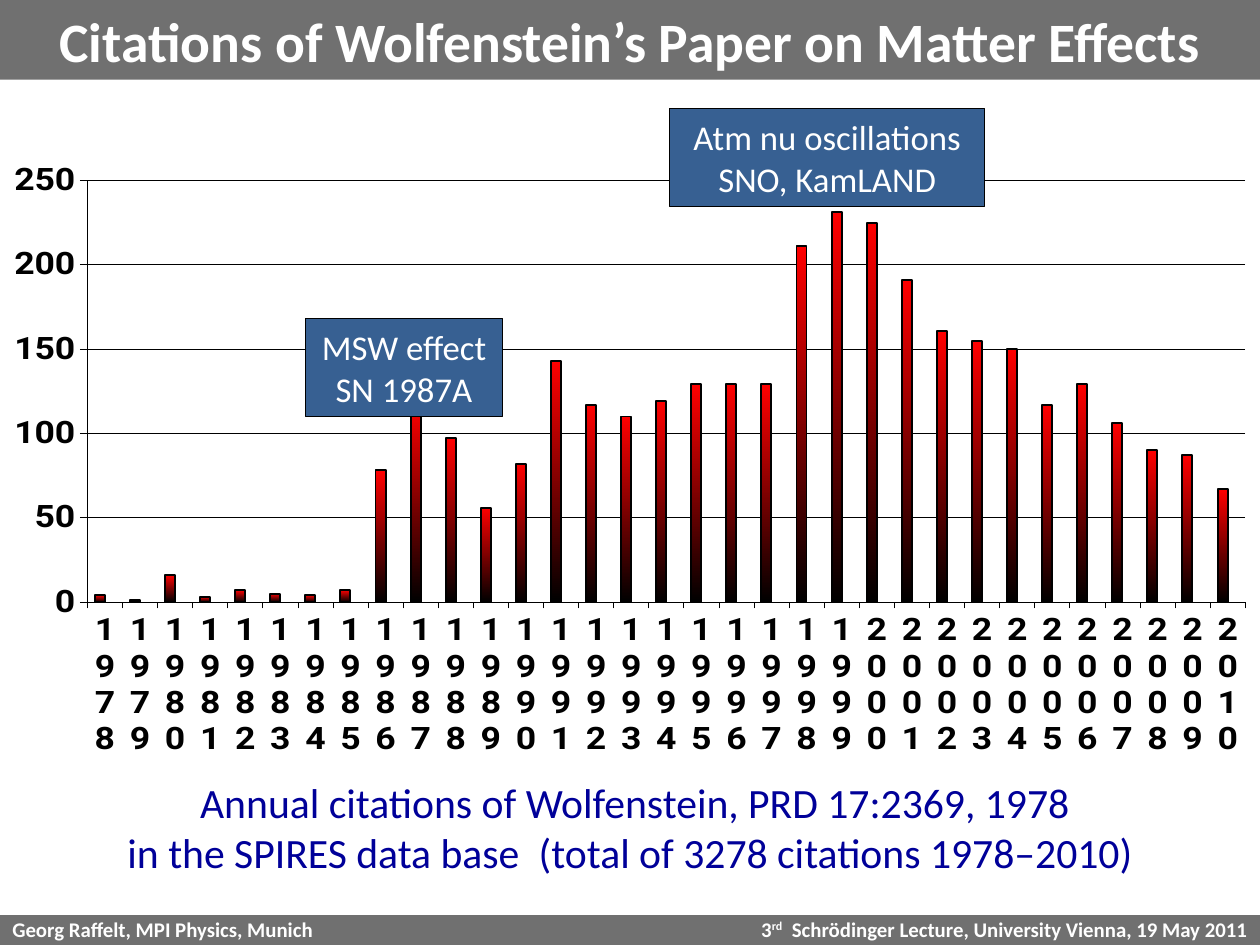
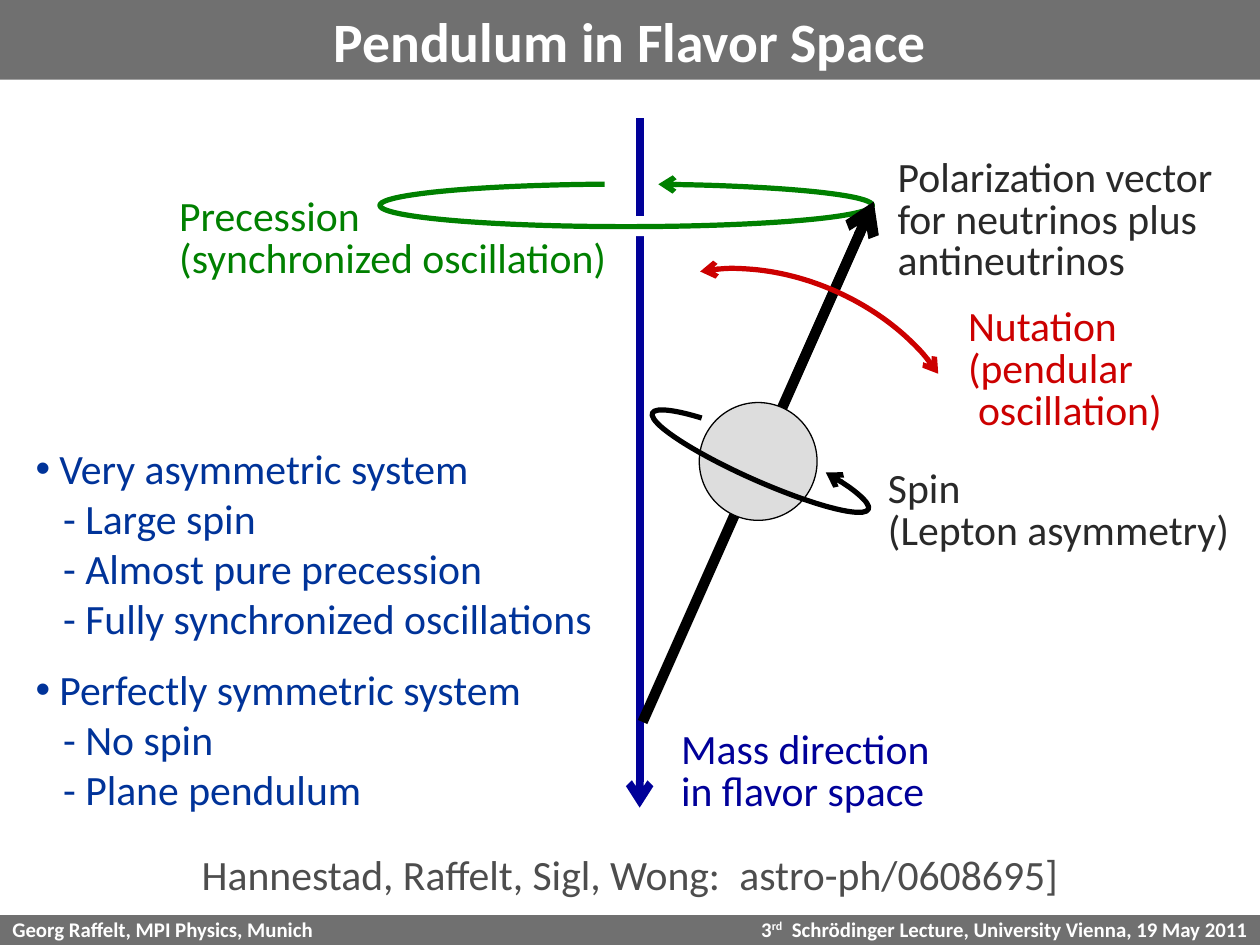
from dataclasses import dataclass
from math import atan2, cos, degrees, radians, sin
from typing import Sequence

from lxml.etree import SubElement
from pptx import Presentation
from pptx.chart.data import CategoryChartData
from pptx.dml.color import RGBColor
from pptx.enum.chart import XL_CHART_TYPE, XL_TICK_MARK
from pptx.enum.shapes import MSO_CONNECTOR, MSO_SHAPE
from pptx.enum.text import MSO_ANCHOR, MSO_AUTO_SIZE, PP_ALIGN
from pptx.oxml.ns import qn
from pptx.util import Emu, Inches, Pt

# Square grid: 100 columns by 75 rows fill the slide
COLS, ROWS = 100, 75
CELL = Inches(10.08) / COLS

GRAY, WHITE, BLACK = "707070", "FFFFFF", "000000"
NAVY, GREEN, RED, INK = "000099", "008000", "CC0000", "292929"


@dataclass(frozen=True)
class Style:
    size: float
    color: str
    bold: bool = False
    align: PP_ALIGN = PP_ALIGN.LEFT
    lead: float | None = None  # line pitch in points


@dataclass(frozen=True)
class Box:
    x: float
    y: float
    w: float
    h: float

    def emu(self) -> tuple:
        return tuple(grid(n) for n in (self.x, self.y, self.w, self.h))


@dataclass(frozen=True)
class Arc:
    x: float  # centre
    y: float
    rx: float
    ry: float
    tilt: float
    start: float  # degrees, clockwise
    stop: float
    color: str
    ends: tuple


@dataclass(frozen=True)
class Label:
    x: float
    mid: float
    w: float
    color: str
    lines: tuple


TITLE = Style(32, WHITE, True, PP_ALIGN.CENTER)
FOOT = Style(12, WHITE, True)
NOTE = Style(20, WHITE, align=PP_ALIGN.CENTER)


def grid(n: float) -> Emu:
    return Emu(round(n * CELL))


def rgb(code: str) -> RGBColor:
    return RGBColor.from_string(code)


# Text: a bar in a line stands for one wide space
def add(para, text: str, style: Style):
    for i, part in enumerate(text.split("|")):
        for piece in ([" ", part] if i else [part]):
            run = para.add_run()
            run.text = piece
            font = run.font
            font.name, font.size, font.bold = "Calibri", Pt(style.size), style.bold
            font.color.rgb = rgb(style.color)
            if piece == " ":
                font._element.set("spc", str(round(style.size * 23)))
    return run


def write(frame, lines: Sequence[str], style: Style) -> list:
    frame.word_wrap = True
    frame.auto_size = MSO_AUTO_SIZE.NONE
    frame.vertical_anchor = MSO_ANCHOR.MIDDLE
    for i, text in enumerate(lines):
        para = frame.add_paragraph() if i else frame.paragraphs[0]
        para.alignment = style.align
        para.space_before = Pt(0)
        if style.lead:
            para.line_spacing = Pt(style.lead)
        add(para, text, style)
    return list(frame.paragraphs)


def inset(para, inches: float) -> None:
    para._p.get_or_add_pPr().set("marL", str(Inches(inches)))


def label(slide, box: Box, lines: Sequence[str], style: Style) -> list:
    shape = slide.shapes.add_textbox(*box.emu())
    return write(shape.text_frame, lines, style)


# Shapes and lines
def block(slide, box: Box, fill: str, edge: str | None = None,
          kind=MSO_SHAPE.RECTANGLE):
    shape = slide.shapes.add_shape(kind, *box.emu())
    shape.shadow.inherit = False
    shape.fill.solid()
    shape.fill.fore_color.rgb = rgb(fill)
    if edge:
        stroke(shape, edge, 0.75)
    else:
        shape.line.fill.background()
    return shape


def stroke(shape, color: str, width: float, ends: Sequence[str] = ()) -> None:
    shape.line.color.rgb = rgb(color)
    shape.line.width = Pt(width)
    ln = shape._element.spPr.find(qn("a:ln"))
    for end in ends:
        SubElement(ln, qn(f"a:{end}End"), type="arrow")


def arrow(slide, x1: float, y1: float, x2: float, y2: float,
          color: str, width: float) -> None:
    line = slide.shapes.add_connector(
        MSO_CONNECTOR.STRAIGHT, grid(x1), grid(y1), grid(x2), grid(y2))
    stroke(line, color, width, ["tail"])
    SubElement(line._element.spPr, qn("a:effectLst"))


def bend(slide, arc: Arc) -> None:
    box = Box(arc.x - arc.rx, arc.y - arc.ry, 2 * arc.rx, 2 * arc.ry)
    shape = slide.shapes.add_shape(MSO_SHAPE.ARC, *box.emu())
    shape.rotation = arc.tilt
    # The preset counts angles as seen from the centre, in 1/60000 degree
    for i, turn in enumerate((arc.start, arc.stop)):
        ang = radians(turn)
        seen = degrees(atan2(arc.ry * sin(ang), arc.rx * cos(ang))) % 360
        shape.adjustments[i] = seen * 0.6
    shape.shadow.inherit = False
    shape.fill.background()
    stroke(shape, arc.color, 3, arc.ends)


# Shared frame: title band, and footer on the master
def start(deck, layout: int, title: str):
    slide = deck.slides.add_slide(deck.slide_layouts[layout])
    head = slide.shapes.title
    head.left, head.top, head.width, head.height = Box(0, 0, COLS, 6.32).emu()
    head.fill.solid()
    head.fill.fore_color.rgb = rgb(GRAY)
    write(head.text_frame, [title], TITLE)
    return slide


def footer(deck, slide) -> None:
    foot = Box(0, 72.64, COLS, 2.36)
    band = block(slide, foot, GRAY)
    write(band.text_frame, ["Georg Raffelt, MPI Physics, Munich"], FOOT)
    half = slide.shapes.add_textbox(*Box(50, foot.y, 50, foot.h).emu())
    para = write(half.text_frame, ["3"], FOOT)[0]
    para.alignment = PP_ALIGN.RIGHT
    add(para, "rd", FOOT).font._element.set("baseline", "30000")
    add(para, "|Schrödinger Lecture, University Vienna, 19 May 2011", FOOT)
    for i, shape in enumerate((band, half)):
        shape.text_frame.margin_top = 0
        shape.text_frame.margin_bottom = Inches(0.02)
        shape._element.nvSpPr.cNvPr.set("id", str(101 + i))
        deck.slide_master.shapes._spTree.append(shape._element)


# Slide 1: column chart
CITES = (4, 1, 16, 3, 7, 5, 4, 7, 78, 118, 97, 56, 82, 143, 117, 110, 119,
         129, 129, 129, 211, 231, 225, 191, 161, 155, 150, 117, 129, 106,
         90, 87, 67)


def thin(line, width: float = 0.28) -> None:
    line.color.rgb = rgb(BLACK)
    line.width = Pt(width)


def plot(slide) -> None:
    data = CategoryChartData()
    data.categories = [str(1978 + i) for i in range(len(CITES))]
    data.add_series("Series 1", CITES)
    data.add_series("Series 2", [None] * len(CITES))
    chart = slide.shapes.add_chart(
        XL_CHART_TYPE.COLUMN_CLUSTERED,
        *Box(-0.07, 11.36, COLS, 48.75).emu(), data).chart
    chart.has_legend = chart.has_title = False

    for font in (chart.font, chart.category_axis.tick_labels.font,
                 chart.value_axis.tick_labels.font):
        font.name, font.size, font.bold = "Roboto", Pt(20.5), True
        font.color.rgb = rgb(BLACK)
    for axis in (chart.category_axis, chart.value_axis):
        axis.major_tick_mark = XL_TICK_MARK.OUTSIDE
        axis.minor_tick_mark = XL_TICK_MARK.NONE
        thin(axis.format.line)
    # Level labels, so that narrow columns stack the digits
    body = chart.category_axis._element.find(qn("c:txPr")).find(qn("a:bodyPr"))
    body.set("rot", "0")
    body.set("vert", "horz")
    scale = chart.value_axis
    scale.minimum_scale, scale.maximum_scale, scale.major_unit = 0, 250, 50
    scale.has_major_gridlines = True
    thin(scale.major_gridlines.format.line)

    bars = chart.plots[0]
    bars.gap_width, bars.overlap = 150, 0
    bars.vary_by_categories = False
    for series in bars.series:
        thin(series.format.line, 1.14)
    fill = bars.series[0].format.fill
    fill.gradient()
    fill.gradient_angle = 270
    for stop, color in zip(fill.gradient_stops, ("FF0000", BLACK)):
        stop.color.rgb = rgb(color)
    rest = bars.series[1].format.fill
    rest.solid()
    rest.fore_color.rgb = rgb("C0504D")

    # Fixed inner plot area
    area = chart._chartSpace.chart.plotArea
    for old in area.findall(qn("c:layout")):
        area.remove(old)
    layout = SubElement(area, qn("c:layout"))
    area.insert(0, layout)
    manual = SubElement(layout, qn("c:manualLayout"))
    for tag, val in (("layoutTarget", "inner"), ("xMode", "edge"),
                     ("yMode", "edge"), ("x", "0.07"), ("y", "0.07"),
                     ("w", "0.919"), ("h", "0.791")):
        SubElement(manual, qn(f"c:{tag}"), val=val)


def cites(deck) -> None:
    slide = start(deck, 5, "Citations of Wolfenstein’s Paper on Matter Effects")
    footer(deck, slide)
    plot(slide)
    paras = label(slide, Box(1.6, 60.15, 96.8, 10.9),
                  ["Annual citations of Wolfenstein, PRD 17:2369, 1978",
                   "in the SPIRES data base|(total of 3278 citations 1978–2010)"],
                  Style(24, NAVY, align=PP_ALIGN.CENTER))
    inset(paras[0], 0.08)
    for box, lines in (
            (Box(24.23, 25.27, 15.67, 7.8), ["MSW effect", "SN 1987A"]),
            (Box(53.15, 8.6, 25, 7.8), ["Atm nu oscillations", "SNO, KamLAND"])):
        shape = block(slide, box, "376092", BLACK)
        write(shape.text_frame, lines, NOTE)


# Slide 2: pendulum
LABELS = (
    Label(53.08, 61.33, 24, NAVY, ("Mass direction", "in flavor space")),
    Label(13.25, 19.05, 37, GREEN, ("Precession", "(synchronized oscillation)")),
    Label(75.85, 29.45, 20, RED, ("Nutation", "(pendular", "oscillation)")),
    Label(69.5, 40.63, 30, INK, ("Spin", "(Lepton asymmetry)")),
    Label(70.27, 17.6, 29, INK,
          ("Polarization vector", "for neutrinos plus", "antineutrinos")),
)
TURN = Arc(49.7, 16.3, 19.54, 1.69, 0, -82.5, 265, GREEN, ("head",))
SPIN = Arc(60.35, 36.6, 9.38, 1.54, 24, -57, 233, BLACK, ("head",))
NOD = Arc(62.55, 31.65, 14.38, 9.33, 24, 223.2, 314.5, RED, ("head", "tail"))
POINTS = ("Very asymmetric system", "- Large spin", "- Almost pure precession",
          "- Fully synchronized oscillations", "Perfectly symmetric system",
          "- No spin", "- Plane pendulum")


def points(slide) -> None:
    body = slide.placeholders[1]
    body.left, body.top, body.width, body.height = Box(1.83, 34.67, 48.5, 30.7).emu()
    paras = write(body.text_frame, POINTS, Style(24, "003399"))
    body.text_frame.vertical_anchor = MSO_ANCHOR.TOP
    for i, para in enumerate(paras):
        props = para._p.get_or_add_pPr()
        sub = POINTS[i].startswith("-")
        inset(para, 0.22 if sub else 0.19)
        props.set("indent", str(0 if sub else -Inches(0.19)))
        if sub:
            SubElement(props, qn("a:buNone"))
        else:
            SubElement(props, qn("a:buChar"), char="•")
            para.space_before = Pt(12 if i else 0)


def swing(deck) -> None:
    slide = start(deck, 1, "Pendulum in Flavor Space")
    points(slide)
    arrow(slide, 50.77, 9.4, 50.77, 64.1, NAVY, 4.5)
    block(slide, Box(50, 17.15, 1.6, 1.6), WHITE)
    bend(slide, TURN)
    arrow(slide, 51, 57.3, 69.35, 16, BLACK, 6)
    block(slide, Box(55.5, 31.95, 9.35, 9.35), "DDDDDD", BLACK, MSO_SHAPE.OVAL)
    bend(slide, SPIN)
    bend(slide, NOD)
    for item in LABELS:
        high = 3.3 * len(item.lines) + 1
        paras = label(slide, Box(item.x, item.mid - high / 2, item.w, high),
                      item.lines, Style(24, item.color, lead=24))
        if item.color == RED:
            inset(paras[-1], 0.08)
    label(slide, Box(1.6, 66.85, 96.8, 5),
          ["Hannestad, Raffelt, Sigl, Wong:|astro-ph/0608695]"],
          Style(24, "4D4D4D", align=PP_ALIGN.CENTER))


def main() -> None:
    deck = Presentation()
    deck.slide_width, deck.slide_height = grid(COLS), grid(ROWS)
    cites(deck)
    swing(deck)
    deck.save("out.pptx")


if __name__ == "__main__":
    main()
